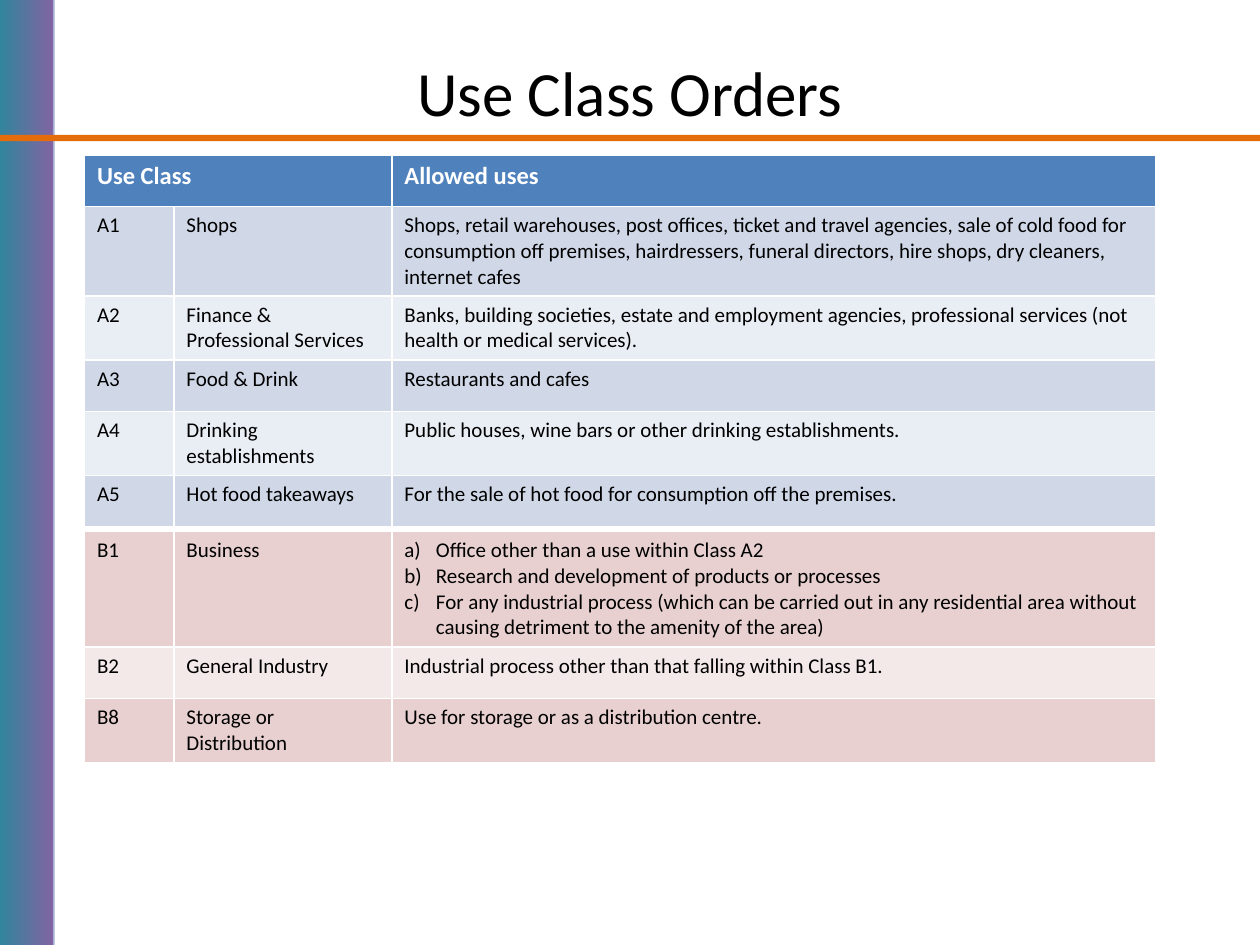
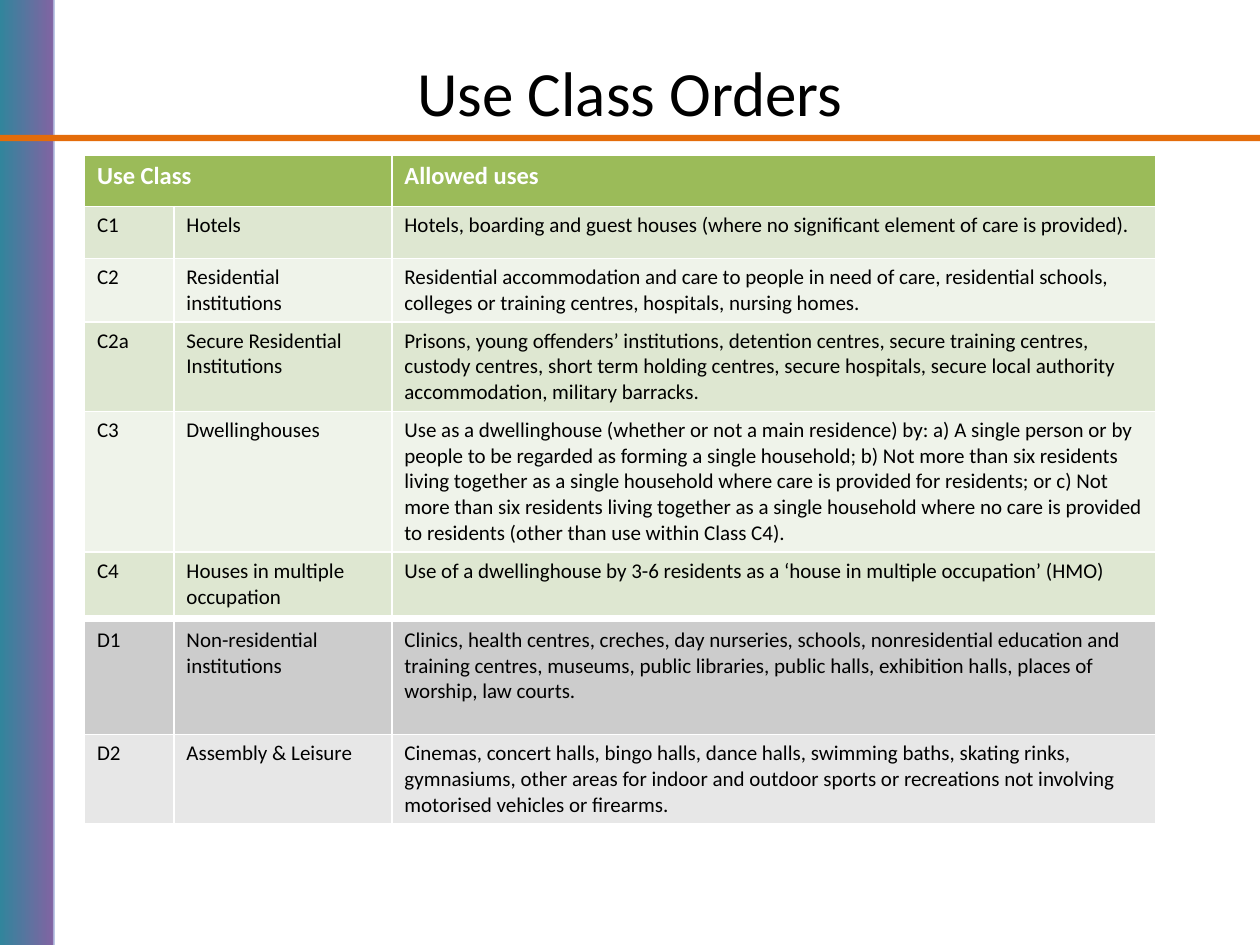
from copy import deepcopy
from lxml import etree
from pptx import Presentation
from pptx.dml.color import RGBColor
from pptx.enum import shapes, text
from pptx.oxml.ns import qn
from pptx.util import Inches, Pt

FONT = "Calibri"
TITLE = "Use Class Orders"
HEAD = ("Use Class", "", "Allowed uses")
COLS = (0.71, 1.73, 6.06)
LEFT, ROW = 0.67, 0.41
HEX = {
    "text": "000000", "white": "FFFFFF", "rule": "E46C0A",
    "blue": "4F81BD", "blue dark": "D0D8E8", "blue light": "E9EDF4",
    "red dark": "E8D0D0", "red light": "F4E9E9",
    "green": "9BBB59", "green dark": "DEE7D1", "green light": "EFF3EA",
    "grey dark": "CCCCCC", "grey light": "E7E7E7",
}
BAND = ((0, "31859C"), (0.97, "8064A2"), (1, "C2D1ED"))

SLIDES = [
    [
        {"top": 1.23, "hue": "blue", "head": True, "rows": [
            ("A1", "Shops", "Shops, retail warehouses, post offices, ticket and travel agencies, sale of cold food for consumption off premises, hairdressers, funeral directors, hire shops, dry cleaners, internet cafes"),
            ("A2", "Finance & Professional Services", "Banks, building societies, estate and employment agencies, professional services (not health or medical services)."),
            ("A3", "Food & Drink", "Restaurants and cafes"),
            ("A4", "Drinking establishments", "Public houses, wine bars or other drinking establishments."),
            ("A5", "Hot food takeaways", "For the sale of hot food for consumption off the premises."),
        ]},
        {"top": 4.22, "hue": "red", "rows": [
            ("B1", "Business", [
                "Office other than a use within Class A2",
                "Research and development of products or processes",
                "For any industrial process (which can be carried out in any residential area without causing detriment to the amenity of the area)",
            ]),
            ("B2", "General Industry", "Industrial process other than that falling within Class B1."),
            ("B8", "Storage or Distribution", "Use for storage or as a distribution centre."),
        ]},
    ],
    [
        {"top": 1.23, "hue": "green", "head": True, "rows": [
            ("C1", "Hotels", "Hotels, boarding and guest houses (where no significant element of care is provided)."),
            ("C2", "Residential institutions", "Residential accommodation and care to people in need of care, residential schools, colleges or training centres, hospitals, nursing homes."),
            ("C2a", "Secure Residential Institutions", "Prisons, young offenders’ institutions, detention centres, secure training centres, custody centres, short term holding centres, secure hospitals, secure local authority accommodation, military barracks."),
            ("C3", "Dwellinghouses", "Use as a dwellinghouse (whether or not a main residence) by: a) A single person or by people to be regarded as forming a single household; b) Not more than six residents living together as a single household where care is provided for residents; or c) Not more than six residents living together as a single household where no care is provided to residents (other than use within Class C4)."),
            ("C4", "Houses in multiple occupation", "Use of a dwellinghouse by 3-6 residents as a ‘house in multiple occupation’ (HMO)"),
        ]},
        {"top": 4.93, "hue": "grey", "tall": {0: 0.9}, "rows": [
            ("D1", "Non-residential institutions", "Clinics, health centres, creches, day nurseries, schools, nonresidential education and training centres, museums, public libraries, public halls, exhibition halls, places of worship, law courts."),
            ("D2", "Assembly & Leisure", "Cinemas, concert halls, bingo halls, dance halls, swimming baths, skating rinks, gymnasiums, other areas for indoor and outdoor sports or recreations not involving motorised vehicles or firearms."),
        ]},
    ],
]


def rgb(name):
    return RGBColor.from_string(HEX[name])


def style(para, size, color, bold=False):
    for run in para.runs:
        font = run.font
        font.name, font.size, font.bold = FONT, Pt(size), bold
        font.color.rgb = rgb(color)


def add_bar(slide, layout, place, box):
    bar = slide.shapes.add_shape(shapes.MSO_SHAPE.RECTANGLE, *map(Inches, box))
    bar.shadow.inherit = False
    bar.line.fill.background()
    layout.shapes.element.insert(place, bar.element)
    return bar


def add_decor(slide, layout):
    band = add_bar(slide, layout, 2, (0, 0, 0.43, 7.5))
    band.fill.gradient()
    band.fill.gradient_angle = 0
    stops = band.element.find(".//" + qn("a:gsLst"))
    stops.append(deepcopy(stops[-1]))
    for stop, (pos, color) in zip(band.fill.gradient_stops, BAND):
        stop.position = pos
        stop.color.rgb = RGBColor.from_string(color)
    rule = add_bar(slide, layout, 3, (0, 1.07, 10, 0.05))
    rule.fill.solid()
    rule.fill.fore_color.rgb = rgb("rule")


def add_title(slide):
    title = slide.shapes.title
    title.left, title.top, title.width, title.height = map(Inches, (0.5, 0.3, 9, 0.85))
    frame = title.text_frame
    frame.text = TITLE
    frame.vertical_anchor = text.MSO_ANCHOR.MIDDLE
    frame.paragraphs[0].alignment = text.PP_ALIGN.CENTER
    style(frame.paragraphs[0], 36, "text")


def set_letter(para):
    props = para._p.get_or_add_pPr()
    props.set("marL", str(Inches(0.25)))
    props.set("indent", str(-Inches(0.25)))
    etree.SubElement(props, qn("a:buAutoNum"), type="alphaLcParenR")


def fill_cell(cell, words, fill, size, color, bold):
    cell.fill.solid()
    cell.fill.fore_color.rgb = rgb(fill)
    listed = isinstance(words, list)
    cell.text_frame.text = "\n".join(words) if listed else words
    for para in cell.text_frame.paragraphs:
        if listed:
            set_letter(para)
        style(para, size, color, bold)


def add_grid(slide, spec):
    head = spec.get("head", False)
    rows = [HEAD] * head + spec["rows"]
    tall = spec.get("tall", {})
    highs = [tall.get(i, ROW) for i in range(len(rows))]
    box = (LEFT, spec["top"], sum(COLS), sum(highs))
    grid = slide.shapes.add_table(len(rows), len(COLS), *map(Inches, box)).table
    grid.first_row, grid.horz_banding = head, False
    for col, width in zip(grid.columns, COLS):
        col.width = Inches(width)
    for i, (row, high) in enumerate(zip(rows, highs)):
        grid.rows[i].height = Inches(high)
        top = head and i == 0
        shade = " dark" if (i - head) % 2 == 0 else " light"
        look = (spec["hue"], 14, "white", True) if top else (spec["hue"] + shade, 12, "text", False)
        for j, words in enumerate(row):
            fill_cell(grid.cell(i, j), words, *look)
    if head:
        grid.cell(0, 0).merge(grid.cell(0, 1))


def main():
    deck = Presentation()
    deck.slide_width, deck.slide_height = Inches(10), Inches(7.5)
    layout = deck.slide_layouts[5]
    for i, grids in enumerate(SLIDES):
        slide = deck.slides.add_slide(layout)
        if i == 0:
            add_decor(slide, layout)
        add_title(slide)
        for grid in grids:
            add_grid(slide, grid)
    deck.save("out.pptx")


if __name__ == "__main__":
    main()
